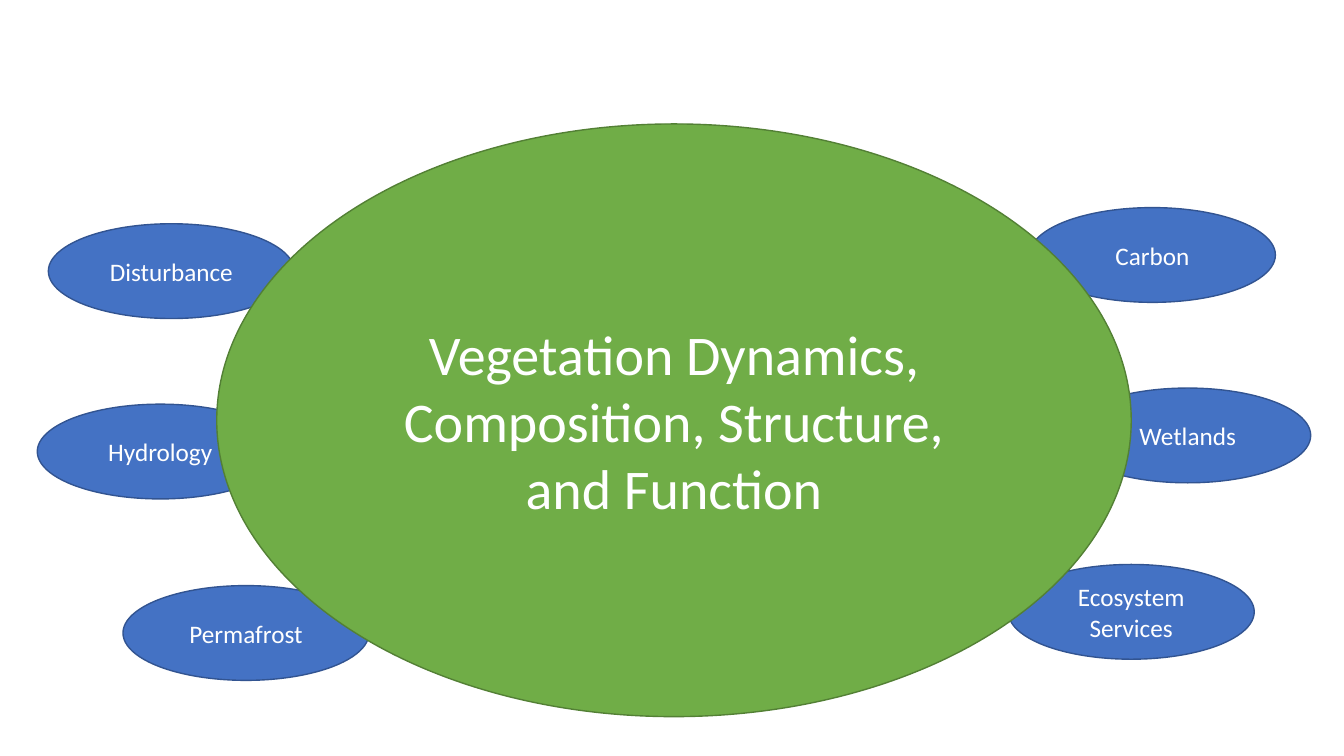
from pptx import Presentation
from pptx.dml.color import RGBColor
from pptx.enum.shapes import MSO_SHAPE
from pptx.enum.text import MSO_ANCHOR, PP_ALIGN
from pptx.util import Inches, Pt

OVAL = MSO_SHAPE.OVAL
MIDDLE = MSO_ANCHOR.MIDDLE
CENTER = PP_ALIGN.CENTER

WHITE = RGBColor(0xFF, 0xFF, 0xFF)
BLUE = RGBColor(0x44, 0x72, 0xC4)
DARK_BLUE = RGBColor(0x32, 0x54, 0x91)
GREEN = RGBColor(0x70, 0xAD, 0x47)
DARK_GREEN = RGBColor(0x53, 0x80, 0x35)

# Content: label, left, top
TOPICS = [
    ("Disturbance", 0.48, 2.22),
    ("Hydrology", 0.37, 4.01),
    ("Permafrost", 1.22, 5.81),
    ("Carbon", 10.21, 2.06),
    ("Ecosystem Services", 10, 5.6),
    ("Wetlands", 10.56, 3.85),
]
TOPIC_W, TOPIC_H = 2.44, 0.94
THEME = "Vegetation Dynamics, Composition, Structure, and Function"


def add_oval(s, text, left, top, width, height, fill, line, size):
    sp = s.shapes.add_shape(OVAL, Inches(left), Inches(top),
                            Inches(width), Inches(height))
    sp.shadow.inherit = False
    sp.fill.solid()
    sp.fill.fore_color.rgb = fill
    sp.line.color.rgb = line
    sp.line.width = Pt(1)
    tf = sp.text_frame
    tf.word_wrap = True
    tf.vertical_anchor = MIDDLE
    p = tf.paragraphs[0]
    p.text = text
    p.alignment = CENTER
    p.font.name = "Calibri"
    p.font.size = Pt(size)
    p.font.color.rgb = WHITE


prs = Presentation()
prs.slide_width, prs.slide_height = Inches(13.33), Inches(7.5)
s = prs.slides.add_slide(prs.slide_layouts[6])

# Surrounding topics, tucked behind the central theme
for label, left, top in TOPICS:
    add_oval(s, label, left, top, TOPIC_W, TOPIC_H, BLUE, DARK_BLUE, 18)

# Central theme
add_oval(s, THEME, 2.15, 1.23, 9.07, 5.88, GREEN, DARK_GREEN, 40)

prs.save("out.pptx")
